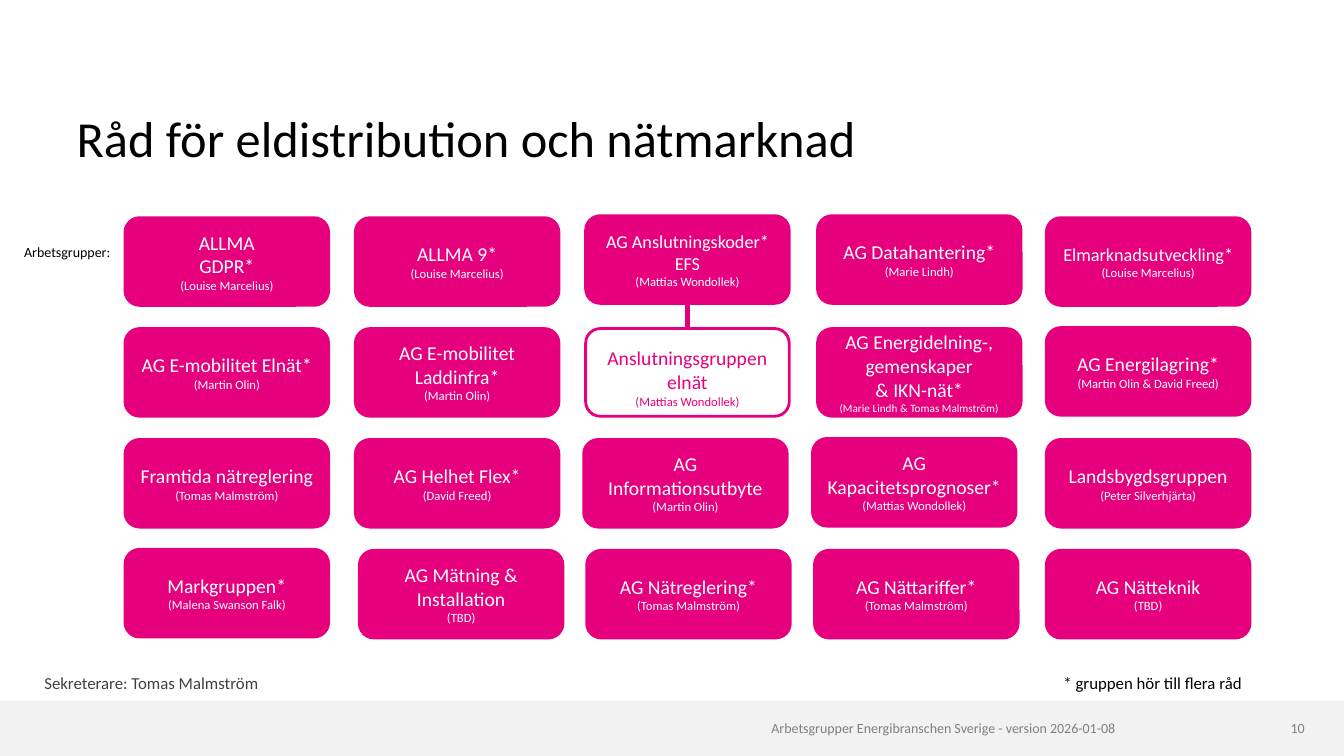
import dataclasses

import lxml.etree
import pptx
import pptx.dml.color
import pptx.enum.shapes
import pptx.enum.text
import pptx.oxml.ns
import pptx.util

ALIGN = pptx.enum.text.PP_ALIGN
ANCHOR = pptx.enum.text.MSO_ANCHOR
SHAPE = pptx.enum.shapes.MSO_SHAPE
COLS, ROWS = 133.33, 75


@dataclasses.dataclass(frozen=True)
class Theme:
    """Colours, font and type sizes of the deck."""
    font: str = "Calibri"
    pink: str = "E6007E"
    link: str = "E1007B"
    white: str = "FFFFFF"
    black: str = "000000"
    dark: str = "404040"
    grey: str = "808080"
    band: str = "F2F2F2"
    title: int = 36
    group: int = 14
    group_tight: int = 13
    note: int = 12
    small: int = 10
    person: int = 9
    person_tight: int = 8


@dataclasses.dataclass(frozen=True)
class Group:
    """One working group, with its shift from the grid cell."""
    name: str
    person: str
    dx: float = 0
    dy: float = 0
    size: int = Theme.group
    person_size: int = Theme.person
    outlined: bool = False


T = Theme()
GROUPS = [
    [Group("ALLMA\nGDPR*", "Louise Marcelius"),
     Group("ALLMA 9*", "Louise Marcelius"),
     Group("AG Anslutningskoder* EFS", "Mattias Wondollek", dy=-0.2, size=T.group_tight),
     Group("AG Datahantering*", "Marie Lindh", dx=0.15, dy=-0.2),
     Group("Elmarknadsutveckling*", "Louise Marcelius", size=T.group_tight)],
    [Group("AG E-mobilitet Elnät*", "Martin Olin"),
     Group("AG E-mobilitet Laddinfra*", "Martin Olin"),
     Group("Anslutningsgruppen elnät", "Mattias Wondollek", outlined=True),
     Group("AG Energidelning-, gemenskaper\n& IKN-nät*", "Marie Lindh & Tomas Malmström",
           dx=0.15, person_size=T.person_tight),
     Group("AG Energilagring*", "Martin Olin & David Freed", dy=-0.1)],
    [Group("Framtida nätreglering", "Tomas Malmström"),
     Group("AG Helhet Flex*", "David Freed"),
     Group("AG Informationsutbyte", "Martin Olin", dx=-0.2),
     Group("AG Kapacitetsprognoser*", "Mattias Wondollek", dx=-0.35, dy=-0.1),
     Group("Landsbygdsgruppen", "Peter Silverhjärta")],
    [Group("Markgruppen*", "Malena Swanson Falk", dy=-0.1),
     Group("AG Mätning & Installation", "TBD", dx=0.4),
     Group("AG Nätreglering*", "Tomas Malmström", dx=0.1),
     Group("AG Nättariffer*", "Tomas Malmström", dx=-0.15),
     Group("AG Nätteknik", "TBD")],
]


def grid(n):
    """Turn a number of grid columns or rows into a length."""
    return pptx.util.Inches(n / 10)


def rgb(color):
    """Return a colour object."""
    return pptx.dml.color.RGBColor.from_string(color)


def add_run(p, text, size, color):
    """Append one formatted run to a paragraph."""
    r = p.add_run()
    r.text = text
    r.font.name = T.font
    r.font.size = pptx.util.Pt(size)
    r.font.color.rgb = rgb(color)


def set_frame(sp, anchor, side=0, top=0):
    """Set wrapping, anchor and insets, and return the text frame."""
    tf = sp.text_frame
    tf.word_wrap = True
    tf.vertical_anchor = anchor
    tf.margin_left = tf.margin_right = grid(side)
    tf.margin_top, tf.margin_bottom = grid(top), 0
    return tf


def add_text(s, box, text, size, color, align=ALIGN.LEFT, anchor=ANCHOR.MIDDLE, spacing=1.0):
    """Place one line of text in a box."""
    sp = s.shapes.add_textbox(*map(grid, box))
    p = set_frame(sp, anchor).paragraphs[0]
    p.alignment = align
    p.line_spacing = spacing
    add_run(p, text, size, color)


def add_block(s, kind, box, fill, line=None):
    """Place a flat shape, outlined when a line colour is given."""
    sp = s.shapes.add_shape(kind, *map(grid, box))
    sp.shadow.inherit = False
    sp.fill.solid()
    sp.fill.fore_color.rgb = rgb(fill)
    if line:
        sp.line.color.rgb = rgb(line)
        sp.line.width = pptx.util.Pt(2)
    else:
        sp.line.fill.background()
    return sp


def add_group(s, box, group):
    """Draw a working group with its contact person."""
    fill, color = (T.white, T.pink) if group.outlined else (T.pink, T.white)
    sp = add_block(s, SHAPE.ROUNDED_RECTANGLE, box, fill, T.pink)
    tf = set_frame(sp, ANCHOR.MIDDLE, side=1, top=1 if group.outlined else 0)
    lines = [(name, group.size) for name in group.name.split("\n")]
    lines.append((f"({group.person})", group.person_size))
    for i, (text, size) in enumerate(lines):
        p = tf.add_paragraph() if i else tf.paragraphs[0]
        p.alignment = ALIGN.CENTER
        add_run(p, text, size, color)


def add_link(s, x, top, bottom):
    """Draw a vertical link between two groups."""
    cx = s.shapes.add_connector(pptx.enum.shapes.MSO_CONNECTOR.STRAIGHT,
                                grid(x), grid(top), grid(x), grid(bottom))
    cx.line.color.rgb = rgb(T.link)
    cx.line.width = pptx.util.Pt(3)
    lxml.etree.SubElement(cx._element.spPr, pptx.oxml.ns.qn("a:effectLst"))


def add_groups(s, box, groups):
    """Lay the groups out on an even grid and link the middle pair."""
    x, y, w, h = box
    cw, ch = 20.2, 8.7
    step_x = (w - cw) / (len(groups[0]) - 1)
    step_y = (h - ch) / (len(groups) - 1)
    add_link(s, x + w / 2, y + ch / 2, y + step_y + ch / 2)
    for i, row in enumerate(groups):
        for j, group in enumerate(row):
            left, top = x + j * step_x + group.dx, y + i * step_y + group.dy
            add_group(s, (left, top, cw, ch), group)


def add_header(s, box):
    """Place the slide title at the bottom of its box."""
    add_text(s, box, "Råd för eldistribution och nätmarknad", T.title, T.black,
             anchor=ANCHOR.BOTTOM, spacing=0.85)


def add_notes_row(s, box):
    """Place the secretary and the footnote at either end of a row."""
    x, y, w, h = box
    add_text(s, (x, y, 48.6, h), "Sekreterare: Tomas Malmström", T.note, T.dark)
    add_text(s, (x + w - 23.7, y, 23.7, h), "* gruppen hör till flera råd", T.note, T.black)


def add_footer(s, box, number):
    """Draw the footer band with its text and page number."""
    x, y, w, h = box
    add_block(s, SHAPE.RECTANGLE, box, T.band)
    for right, width, text in (
            (22.7, 88.6, "Arbetsgrupper Energibranschen Sverige - version 2026-01-08"),
            (3.9, 3.9, number)):
        add_text(s, (x + w - right - width, y, width, h), text, T.small, T.grey, ALIGN.RIGHT)


def add_council_slide(prs):
    """Build the council slide with its working groups."""
    s = prs.slides.add_slide(prs.slide_layouts[6])
    add_footer(s, (0, 69.5, COLS, 5.5), "10")
    add_header(s, (7.6, 5.9, 94.9, 10.7))
    add_text(s, (2.4, 23.8, 10, 2.5), "Arbetsgrupper:", T.small, T.black, spacing=0.9)
    add_groups(s, (12.4, 21.6, 111.6, 41.7), GROUPS)
    add_notes_row(s, (4.4, 66.6, 124.8, 2.3))


def main():
    """Create and save the presentation."""
    prs = pptx.Presentation()
    prs.slide_width, prs.slide_height = grid(COLS), grid(ROWS)
    add_council_slide(prs)
    prs.save("out.pptx")


if __name__ == "__main__":
    main()
